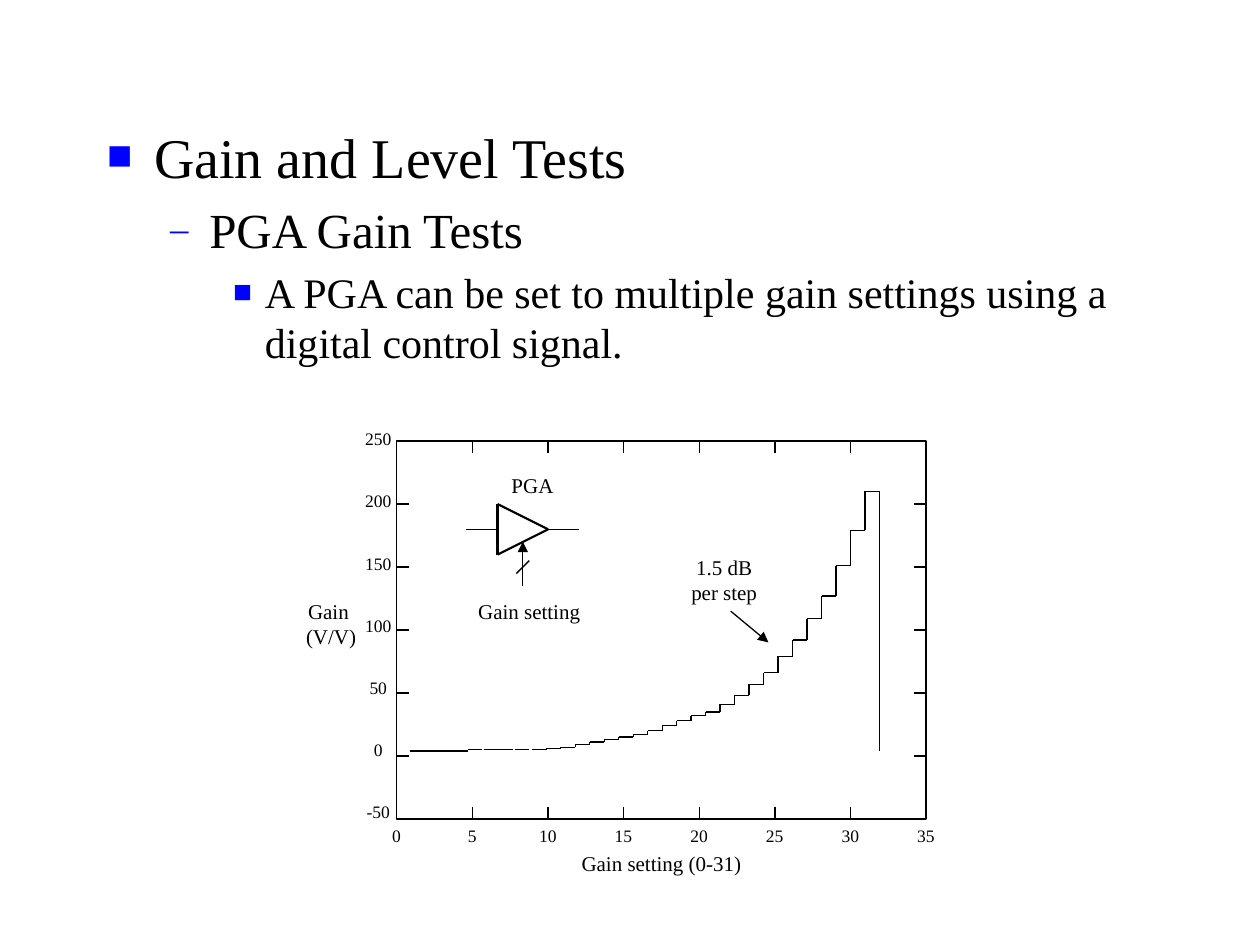
from dataclasses import dataclass
from itertools import pairwise

from lxml.etree import SubElement
from pptx import Presentation
from pptx.dml.color import RGBColor
from pptx.enum.shapes import MSO_CONNECTOR as Connector
from pptx.enum.shapes import MSO_SHAPE as Shape
from pptx.enum.text import MSO_ANCHOR as Anchor
from pptx.enum.text import PP_ALIGN as Align
from pptx.oxml.ns import qn
from pptx.util import Cm, Pt


@dataclass(frozen=True)
class Theme:
    font: str = "Times New Roman"
    ink: str = "000000"
    bullet: str = "0000FF"
    label_size: int = 12
    tick_size: int = 10
    thin: float = 0.75
    thick: float = 1.25


THEME = Theme()

# text, size, bullet, text indent (cm), bullet hang (cm)
OUTLINE = [
    ("Gain and Level Tests", 32, "■", 0.95, 0.95),
    ("PGA Gain Tests", 28, "–", 2.06, 0.79),
    ("A PGA can be set to multiple gain settings using a digital control signal.",
     24, "■", 3.18, 0.64),
]

# Lengths below are in cm: left, top, width, height
OUTLINE_BOX = (1.91, 2.34, 21.59, 5.28)
PLOT_LEFT, PLOT_TOP, PLOT_WIDTH, PLOT_HEIGHT = PLOT = (8, 8.89, 10.67, 7.62)
PLOT_RIGHT, PLOT_BOTTOM = PLOT_LEFT + PLOT_WIDTH, PLOT_TOP + PLOT_HEIGHT
TICK = 0.25

SETTINGS = range(0, 36, 5)
GAINS = range(250, -51, -50)

# Staircase runs: left end, right end, gain of each step
STAIR_RUNS = [
    (8.26, 9.72, [4, 4, 4, 4, 5]),
    (9.75, 10.34, [5, 5]),
    (10.38, 10.67, [5]),
    (10.72, 17.73, [5, 6, 7, 9, 11, 13, 15, 17, 20, 24, 28, 32, 35, 41, 48, 57,
                    66, 79, 92, 109, 127, 151, 179, 210]),
]
FINAL_GAIN = 4

LABELS = [
    (["PGA"], (9.53, 9.4, 2.41, 0.76)),
    (["Gain setting"], (9.02, 11.94, 3.3, 0.76)),
    (["1.5 dB", "per step"], (12.95, 11.05, 3.3, 1.14)),
    (["Gain setting (0-31)"], (10.67, 17.02, 5.33, 0.76)),
    (["Gain ", "(V/V)"], (5.72, 11.94, 1.91, 1.65)),
]

AMPLIFIER_CORNERS = [(10.03, 11.18), (10.03, 10.16), (11.05, 10.67), (10.03, 11.18)]
AMPLIFIER_LEADS = [
    ((10.03, 10.67), (9.4, 10.67)),
    ((11.05, 10.67), (11.68, 10.67)),
    ((10.67, 11.3), (10.41, 11.56)),
]
ARROWS = [
    ((10.54, 11.81), (10.54, 10.92)),
    ((14.73, 12.32), (15.49, 12.95)),
]


def color(value):
    return RGBColor.from_string(value)


def setting_x(setting):
    return PLOT_LEFT + PLOT_WIDTH * setting / SETTINGS[-1]


def gain_y(gain):
    return PLOT_TOP + PLOT_HEIGHT * (GAINS[0] - gain) / (GAINS[0] - GAINS[-1])


def add_line(slide, start, end, weight=THEME.thin, arrow=False):
    line = slide.shapes.add_connector(
        Connector.STRAIGHT, *(Cm(value) for value in (*start, *end)))
    line.line.color.rgb = color(THEME.ink)
    line.line.width = Pt(weight)
    if arrow:
        SubElement(line.line._get_or_add_ln(), qn("a:tailEnd"), type="triangle")
    SubElement(line._element.spPr, qn("a:effectLst"))


def add_path(slide, points, weight=THEME.thin):
    for start, end in pairwise(points):
        add_line(slide, start, end, weight)


def add_text_frame(slide, box):
    frame = slide.shapes.add_textbox(*(Cm(value) for value in box)).text_frame
    frame.word_wrap = True
    frame.vertical_anchor = Anchor.TOP
    return frame


def add_paragraph(frame, index, text, size):
    paragraph = frame.add_paragraph() if index else frame.paragraphs[0]
    run = paragraph.add_run()
    run.text = text
    run.font.name = THEME.font
    run.font.size = Pt(size)
    run.font.color.rgb = color(THEME.ink)
    return paragraph


def add_label(slide, lines, box, size=THEME.label_size):
    frame = add_text_frame(slide, box)
    for index, text in enumerate(lines):
        add_paragraph(frame, index, text, size).alignment = Align.CENTER


def set_bullet(paragraph, character, indent, hang):
    properties = paragraph._p.get_or_add_pPr()
    properties.set("marL", str(Cm(indent)))
    properties.set("indent", str(-Cm(hang)))
    bullet_color = SubElement(properties, qn("a:buClr"))
    SubElement(bullet_color, qn("a:srgbClr"), val=THEME.bullet)
    SubElement(properties, qn("a:buSzPct"), val="75000")
    SubElement(properties, qn("a:buFont"), typeface=THEME.font)
    SubElement(properties, qn("a:buChar"), char=character)


def add_outline(slide):
    frame = add_text_frame(slide, OUTLINE_BOX)
    for level, (text, size, character, indent, hang) in enumerate(OUTLINE):
        paragraph = add_paragraph(frame, level, text, size)
        paragraph.level = level
        paragraph.space_before = Pt(size * 0.2)
        set_bullet(paragraph, character, indent, hang)


def add_amplifier(slide):
    add_path(slide, AMPLIFIER_CORNERS, THEME.thick)
    for start, end in AMPLIFIER_LEADS:
        add_line(slide, start, end)


def add_axes(slide):
    frame = slide.shapes.add_shape(Shape.RECTANGLE, *(Cm(value) for value in PLOT))
    frame.shadow.inherit = False
    frame.fill.background()
    frame.line.color.rgb = color(THEME.ink)
    frame.line.width = Pt(THEME.thin)

    for setting in SETTINGS[1:-1]:
        x = setting_x(setting)
        add_line(slide, (x, PLOT_BOTTOM - TICK), (x, PLOT_BOTTOM))
        add_line(slide, (x, PLOT_TOP), (x, PLOT_TOP + TICK))
    for gain in GAINS[1:-1]:
        y = gain_y(gain)
        add_line(slide, (PLOT_RIGHT, y), (PLOT_RIGHT - TICK, y))
        add_line(slide, (PLOT_LEFT + TICK, y), (PLOT_LEFT, y))

    for setting in SETTINGS:
        box = (setting_x(setting) - 1.4, PLOT_BOTTOM, 2.79, 0.76)
        add_label(slide, [str(setting)], box, THEME.tick_size)
    for index, gain in enumerate(GAINS):
        box = (6.99, 8.51 + 7.52 * index / (len(GAINS) - 1), 1.27, 2.51)
        add_label(slide, [str(gain)], box, THEME.tick_size)


def add_staircase(slide):
    for left, right, gains in STAIR_RUNS:
        pitch = (right - left) / len(gains)
        points = []
        for step, gain in enumerate(gains):
            x, y = left + step * pitch, gain_y(gain)
            if points and points[-1][1] == y:
                points.append((x + pitch, y))
            else:
                points += [(x, y), (x + pitch, y)]
        add_path(slide, points)
    add_line(slide, points[-1], (points[-1][0], gain_y(FINAL_GAIN)))


def main():
    presentation = Presentation()
    presentation.slide_width, presentation.slide_height = Cm(25.4), Cm(19.05)
    slide = presentation.slides.add_slide(presentation.slide_layouts[6])
    add_outline(slide)
    add_amplifier(slide)
    add_axes(slide)
    add_staircase(slide)
    for start, end in ARROWS:
        add_line(slide, start, end, arrow=True)
    for lines, box in LABELS:
        add_label(slide, lines, box)
    presentation.save("out.pptx")


if __name__ == "__main__":
    main()
